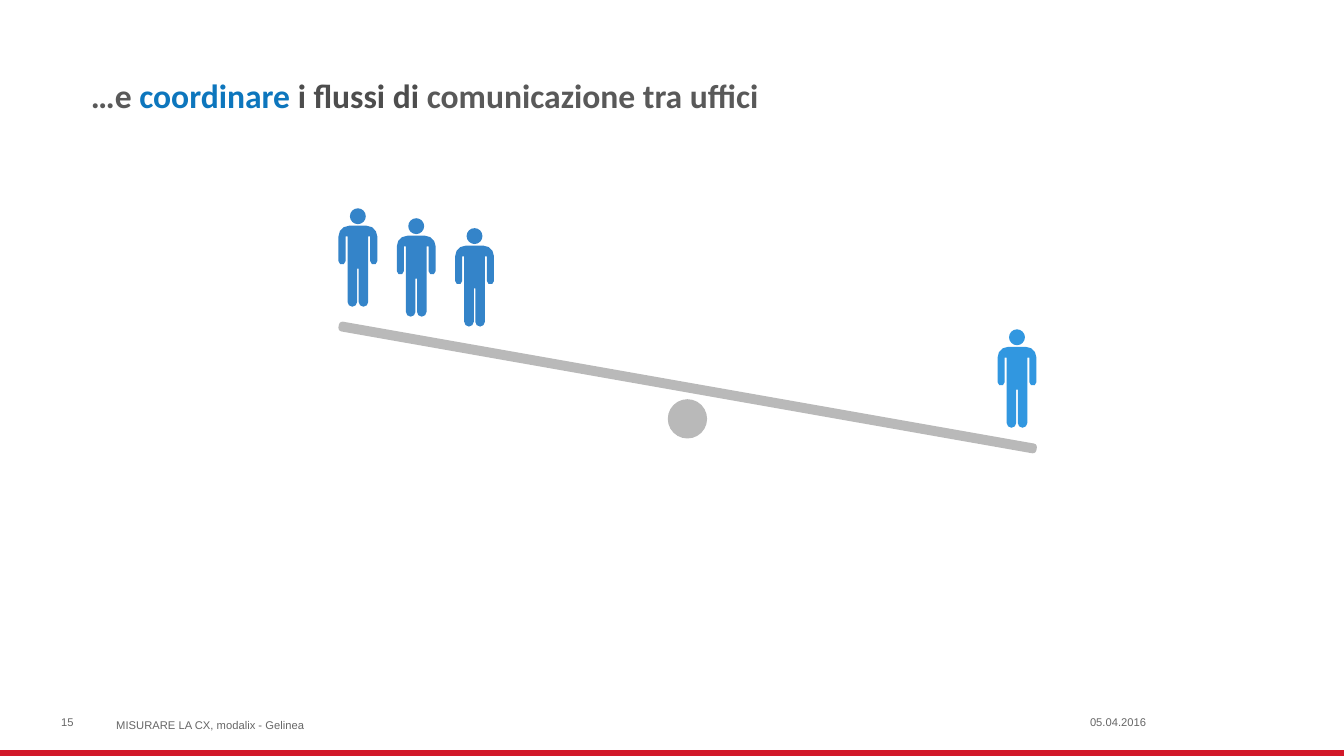
from math import cos, radians, sin

from pptx import Presentation
from pptx.dml.color import RGBColor
from pptx.enum.shapes import MSO_SHAPE
from pptx.enum.text import MSO_ANCHOR, MSO_AUTO_SIZE, PP_ALIGN
from pptx.util import Cm, Pt

RED = RGBColor(0xD2, 0x18, 0x29)
GREY = RGBColor(0xB9, 0xB9, 0xB9)
TEAM_BLUE = RGBColor(0x34, 0x84, 0xC9)
SINGLE_BLUE = RGBColor(0x31, 0x97, 0xE0)
TITLE_BLUE = RGBColor(0x0D, 0x76, 0xBD)
TITLE_GREY = RGBColor(0x59, 0x59, 0x59)
TITLE_DARK = RGBColor(0x4D, 0x4D, 0x4D)
FOOTER_GREY = RGBColor(0x66, 0x66, 0x66)


def add_run(p, text, font="Arial", size=8, color=FOOTER_GREY, bold=False):
    r = p.add_run()
    r.text = text
    r.font.name, r.font.size, r.font.bold = font, Pt(size), bold
    r.font.color.rgb = color


def prepare_frame(tf):
    tf.word_wrap = True
    tf.auto_size = MSO_AUTO_SIZE.NONE
    tf.vertical_anchor = MSO_ANCHOR.BOTTOM
    tf.margin_left = tf.margin_right = tf.margin_top = tf.margin_bottom = 0
    return tf.paragraphs[0]


def paint(sp, color):
    sp.shadow.inherit = False
    sp.fill.solid()
    sp.fill.fore_color.rgb = color
    sp.line.fill.background()


def add_block(s, kind, left, top, width, height, color):
    sp = s.shapes.add_shape(kind, Cm(left), Cm(top), Cm(width), Cm(height))
    paint(sp, color)
    return sp


def add_title(s, parts):
    sp = s.shapes.title
    sp.left, sp.top, sp.width, sp.height = Cm(2.29), Cm(0.33), Cm(30.25), Cm(2.59)
    p = prepare_frame(sp.text_frame)
    p.alignment = PP_ALIGN.LEFT
    p.line_spacing = 0.9
    for text, color in parts:
        add_run(p, text, font="Calibri", size=24, color=color, bold=True)


def add_footer(s, text, left, top, width, align=PP_ALIGN.LEFT):
    sp = s.shapes.add_textbox(Cm(left), Cm(top), Cm(width), Cm(0.51))
    p = prepare_frame(sp.text_frame)
    p.alignment = align
    add_run(p, text)


def arc(cx, cy, radius, start, end, steps=3):
    """Points on an arc; angles in degrees, clockwise from the right."""
    angles = [radians(start + (end - start) * i / steps) for i in range(steps + 1)]
    return [(cx + radius * cos(a), cy + radius * sin(a)) for a in angles]


def add_person(s, center, top, color):
    # Right half of the body, from the shoulder down to the crotch
    half = [
        *arc(0.22, 0.71, 0.27, -90, 0),
        *arc(0.4, 1.33, 0.09, 0, 180),
        (0.31, 0.71), (0.26, 0.71),
        *arc(0.14, 2.36, 0.12, 0, 180, steps=4),
        (0.02, 1.52),
    ]
    body = half + [(-x, y) for x, y in reversed(half)]
    head = arc(0, 0.2, 0.2, 0, 360, steps=16)[:-1]
    outlines = [[(Cm(center + x), Cm(top + y)) for x, y in part]
                for part in (body, head)]
    builder = s.shapes.build_freeform(*outlines[0][0])
    builder.add_line_segments(outlines[0][1:], close=True)
    builder.move_to(*outlines[1][0])
    builder.add_line_segments(outlines[1][1:], close=True)
    paint(builder.convert_to_shape(), color)


def add_seesaw(s):
    add_block(s, MSO_SHAPE.OVAL, 16.83, 10.06, 0.99, 0.99, GREY)
    plank = add_block(s, MSO_SHAPE.ROUNDED_RECTANGLE, 8.4, 9.64, 17.86, 0.25, GREY)
    plank.adjustments[0] = 0.36
    plank.rotation = 10


def main():
    prs = Presentation()
    prs.slide_width, prs.slide_height = Cm(33.87), Cm(19.05)
    s = prs.slides.add_slide(prs.slide_layouts[5])

    # Title and red base line
    add_block(s, MSO_SHAPE.RECTANGLE, 0, 18.9, 33.87, 0.15, RED)
    add_title(s, [("…e ", TITLE_GREY), ("coordinare ", TITLE_BLUE),
                  ("i flussi di ", TITLE_DARK),
                  ("comunicazione tra uffici", TITLE_GREY)])

    # Seesaw with three people against one
    add_seesaw(s)
    for i in range(3):
        add_person(s, 9.02 + 1.47 * i, 5.25 + 0.25 * i, TEAM_BLUE)
    add_person(s, 25.63, 8.3, SINGLE_BLUE)

    # Footer
    add_footer(s, "15", 1.54, 17.86, 1.4)
    add_footer(s, "MISURARE LA CX, modalix - Gelinea", 2.93, 17.93, 23.5)
    add_footer(s, "05.04.2016", 26.8, 17.86, 2.09, PP_ALIGN.RIGHT)

    prs.save("out.pptx")


if __name__ == "__main__":
    main()
